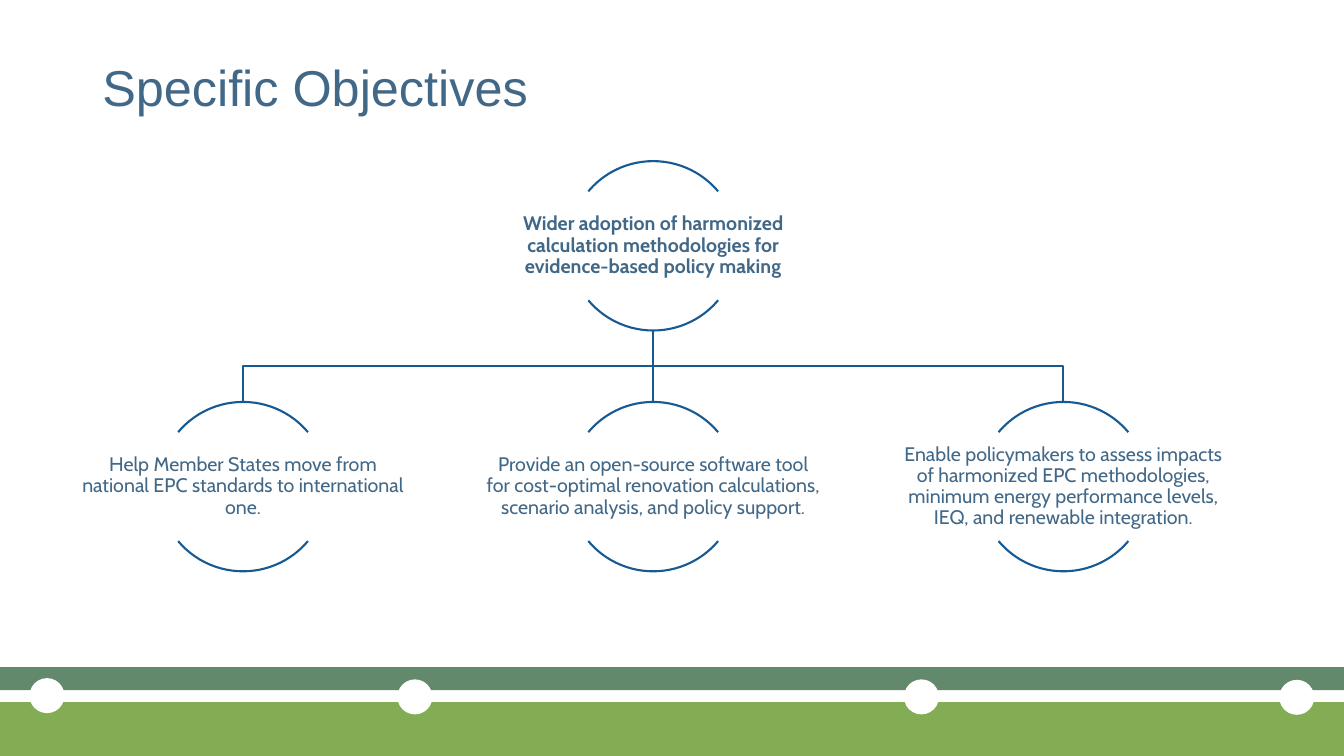
from dataclasses import dataclass

from lxml.etree import SubElement
from pptx import Presentation
from pptx.dml.color import RGBColor
from pptx.enum.shapes import MSO_CONNECTOR, MSO_SHAPE
from pptx.enum.text import MSO_ANCHOR, PP_ALIGN
from pptx.oxml.ns import qn
from pptx.util import Pt


@dataclass(frozen=True)
class Theme:
    text: RGBColor = RGBColor.from_string("426888")
    line: RGBColor = RGBColor.from_string("175A93")
    dark_green: RGBColor = RGBColor.from_string("62896B")
    light_green: RGBColor = RGBColor.from_string("83AD55")
    white: RGBColor = RGBColor.from_string("FFFFFF")
    title_font: str = "Arial"
    body_font: str = "Cabin"
    title_size: int = 36
    body_size: int = 14
    line_width: float = 1.5


class SlideBuilder:
    def __init__(self, slide, theme):
        self.slide = slide
        self.theme = theme

    def filled(self, kind, left, top, width, height, color):
        shape = self.slide.shapes.add_shape(kind, Pt(left), Pt(top), Pt(width), Pt(height))
        shape.shadow.inherit = False
        shape.fill.solid()
        shape.fill.fore_color.rgb = color
        shape.line.fill.background()

    def outline(self, shape):
        shape.shadow.inherit = False
        shape.fill.background()
        self.stroke(shape.line)

    def stroke(self, line):
        line.color.rgb = self.theme.line
        line.width = Pt(self.theme.line_width)

    def arc(self, left, top, diameter, start, end):
        shape = self.slide.shapes.add_shape(
            MSO_SHAPE.ARC, Pt(left), Pt(top), Pt(diameter), Pt(diameter))
        shape.adjustments[0] = start
        shape.adjustments[1] = end
        self.outline(shape)

    def polyline(self, points):
        start, *rest = [(Pt(x), Pt(y)) for x, y in points]
        builder = self.slide.shapes.build_freeform(*start)
        builder.add_line_segments(rest, close=False)
        self.outline(builder.convert_to_shape())

    def straight(self, x, top, bottom):
        connector = self.slide.shapes.add_connector(
            MSO_CONNECTOR.STRAIGHT, Pt(x), Pt(top), Pt(x), Pt(bottom))
        self.stroke(connector.line)
        SubElement(connector.element.spPr, qn("a:effectLst"))

    def text(self, content, left, top, width, height, font, size,
             bold=False, align=PP_ALIGN.LEFT, inset=None):
        box = self.slide.shapes.add_textbox(Pt(left), Pt(top), Pt(width), Pt(height))
        frame = box.text_frame
        frame.word_wrap = True
        frame.vertical_anchor = MSO_ANCHOR.MIDDLE
        if inset is not None:
            frame.margin_left = frame.margin_right = Pt(inset)
            frame.margin_top = frame.margin_bottom = Pt(inset)
        paragraph = frame.paragraphs[0]
        paragraph.text = content
        paragraph.alignment = align
        paragraph.line_spacing = 0.9
        paragraph.font.name = font
        paragraph.font.size = Pt(size)
        paragraph.font.bold = bold
        paragraph.font.color.rgb = self.theme.text

    def node(self, content, center, top, bold=False):
        for start, end in ((132, 192), (24, 84)):
            self.arc(center - DIAMETER / 2, top, DIAMETER, start, end)
        self.text(content, center - DIAMETER, top + (DIAMETER - LABEL_HEIGHT) / 2,
                  2 * DIAMETER, LABEL_HEIGHT, self.theme.body_font,
                  self.theme.body_size, bold, PP_ALIGN.CENTER, 0.7)


SLIDE_WIDTH, SLIDE_HEIGHT = 960, 540
DIAMETER, LABEL_HEIGHT = 121, 77.6
CENTER, PITCH = 466.6, 293
ROOT_TOP, CHILD_TOP = 115.1, 287.1
ROOT = "Wider adoption of harmonized calculation methodologies for evidence-based policy making"
OBJECTIVES = (
    "Help Member States move from national EPC standards to international one.",
    "Provide an open-source software tool for cost-optimal renovation calculations, "
    "scenario analysis, and policy support.",
    "Enable policymakers to assess impacts of harmonized EPC methodologies, "
    "minimum energy performance levels, IEQ, and renewable integration.",
)
FOOTER_DOTS = ((21.1, 484.4), (283.9, 485.3), (645.7, 485.3), (913.8, 485.6))


def main():
    presentation = Presentation()
    presentation.slide_width = Pt(SLIDE_WIDTH)
    presentation.slide_height = Pt(SLIDE_HEIGHT)
    slide = presentation.slides.add_slide(presentation.slide_layouts[6])
    theme = Theme()
    builder = SlideBuilder(slide, theme)

    builder.filled(MSO_SHAPE.RECTANGLE, 0, 476.6, SLIDE_WIDTH, 16.4, theme.dark_green)
    builder.filled(MSO_SHAPE.RECTANGLE, 0, 501.6, SLIDE_WIDTH, 38.4, theme.light_green)
    for left, top in FOOTER_DOTS:
        builder.filled(MSO_SHAPE.OVAL, left, top, 25, 25, theme.white)

    builder.text("Specific Objectives", 66, 12, 828, 104.4,
                 theme.title_font, theme.title_size)

    root_bottom = ROOT_TOP + DIAMETER
    junction = (root_bottom + CHILD_TOP) / 2
    centers = [CENTER + offset * PITCH for offset in (-1, 0, 1)]
    for center in (centers[0], centers[-1]):
        builder.polyline([(CENTER, root_bottom), (CENTER, junction),
                          (center, junction), (center, CHILD_TOP)])
    builder.straight(CENTER, root_bottom, CHILD_TOP)

    builder.node(ROOT, CENTER, ROOT_TOP, bold=True)
    for objective, center in zip(OBJECTIVES, centers):
        builder.node(objective, center, CHILD_TOP)

    presentation.save("out.pptx")


if __name__ == "__main__":
    main()
